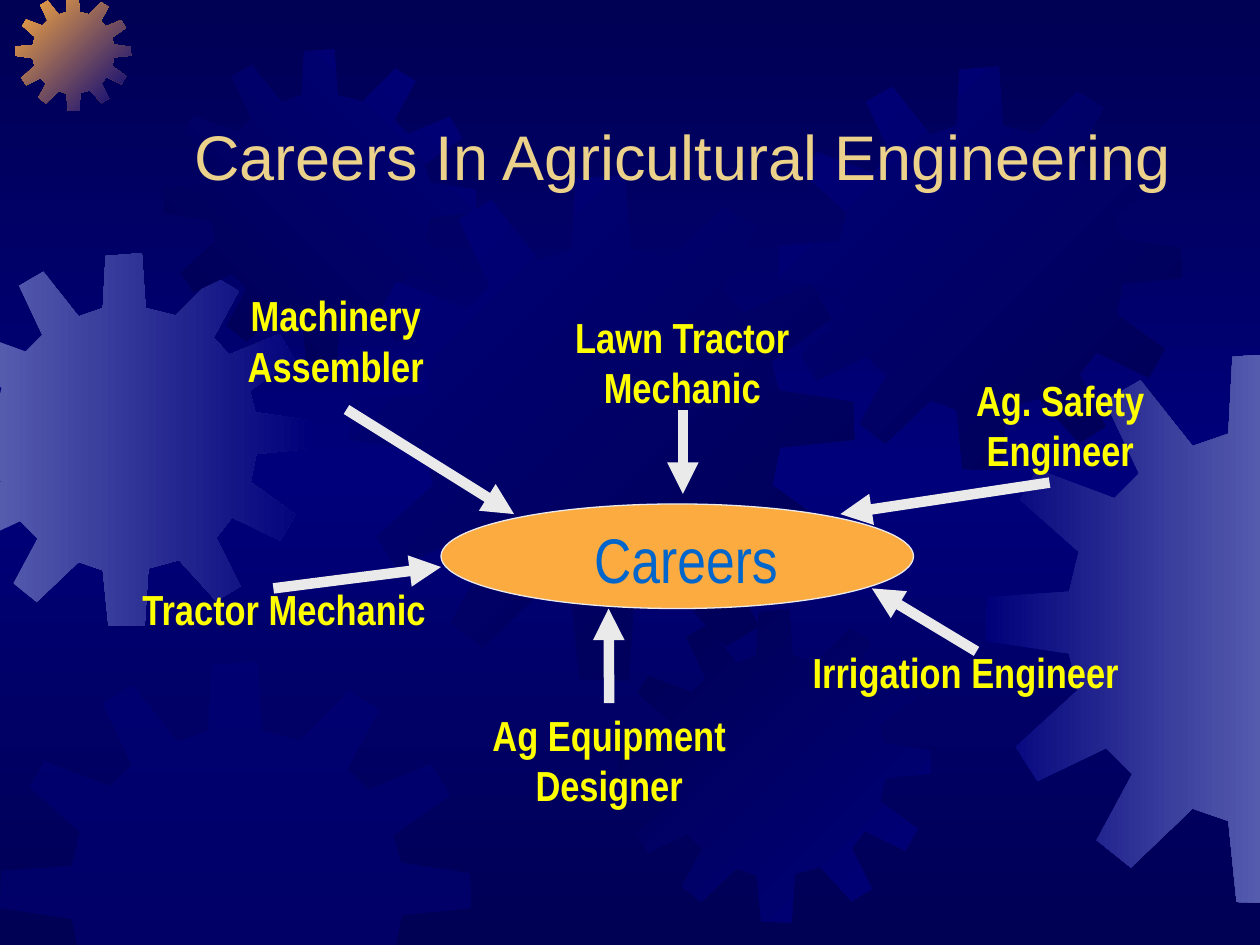
from copy import deepcopy

from lxml.etree import SubElement
from pptx import Presentation
from pptx.dml.color import RGBColor
from pptx.enum.shapes import MSO_CONNECTOR, MSO_SHAPE
from pptx.enum.text import MSO_ANCHOR, PP_ALIGN
from pptx.oxml.ns import qn
from pptx.util import Inches, Pt

NAVY = RGBColor(0x00, 0x00, 0x54)
BLUE = RGBColor(0x00, 0x00, 0x7A)
STEEL = RGBColor(0x55, 0x5B, 0xAD)
ORANGE = RGBColor(0xFC, 0xAB, 0x40)
SAND = RGBColor(0xEB, 0xD1, 0x89)
YELLOW = RGBColor(0xFF, 0xFF, 0x00)
AZURE = RGBColor(0x00, 0x66, 0xCC)
LIGHT = RGBColor(0xEA, 0xEA, 0xEA)

SLIDE_W, SLIDE_H = 10, 7.5

# Outline of a twelve-toothed gear, four points per tooth, on a 401-unit square
GEAR_UNITS = 401
GEAR = [
    (255, 67), (223, 59), (219, 0), (180, 3),
    (177, 59), (151, 68), (113, 20), (87, 35),
    (112, 88), (94, 106), (38, 85), (25, 107),
    (68, 145), (61, 174), (1, 178), (0, 210),
    (61, 219), (67, 246), (22, 287), (38, 312),
    (88, 288), (107, 307), (81, 355), (106, 375),
    (151, 332), (177, 341), (183, 400), (222, 401),
    (226, 339), (259, 330), (299, 374), (325, 358),
    (299, 306), (316, 284), (368, 309), (384, 281),
    (336, 246), (342, 216), (401, 210), (400, 180),
    (341, 171), (335, 148), (383, 114), (367, 87),
    (313, 109), (296, 91), (323, 41), (297, 25),
]

# left, top, size, first colour, last colour, clockwise angle
GEARS = [
    (-0.49, 2.01, 2.96, STEEL, BLUE, 0),
    (0.12, -0.04, 0.92, ORANGE, BLUE, 45),
    (1.3, 0.39, 2.48, NAVY, BLUE, 315),
    (2.77, 1.39, 4.01, BLUE, NAVY, 45),
    (0, 5.25, 3.74, BLUE, None, 0),
    (4.91, 4.84, 2.48, NAVY, BLUE, 45),
    (6.18, 0.53, 3.2, BLUE, NAVY, 45),
    (7.82, 2.8, 4.37, BLUE, STEEL, 0),
]

# label, its left and top, arrow start, arrow end, label side the arrow is joined to
CAREERS = [
    ("Ag. Safety Engineer", (6.16, 0.67), (7.41, 1.58), (5.75, 1.83), None),
    ("Tractor Mechanic", (0, 2.33), (1.25, 2.42), (2.58, 2.25), None),
    ("Machinery Assembler", (0.41, 0), (1.83, 1), (3.16, 1.83), None),
    ("Irrigation Engineer", (5.41, 2.83), (6.83, 2.92), (6, 2.42), None),
    ("Lawn Tractor Mechanic", (3.16, 0.17), (4.5, 1), (4.5, 1.67), None),
    ("Ag Equipment Designer", (2.58, 3.33), (3.91, 3.33), (3.91, 2.58), 0),
]
ONE_LINE = {"Tractor Mechanic", "Irrigation Engineer"}


def add_text(slide, text, box, size, font, color, bold=False, wrap=True,
             anchor=MSO_ANCHOR.TOP, side_margin=0.1):
    sp = slide.shapes.add_textbox(*map(Inches, box))
    tf = sp.text_frame
    tf.word_wrap = wrap
    tf.vertical_anchor = anchor
    tf.margin_left = tf.margin_right = Inches(side_margin)
    p = tf.paragraphs[0]
    p.alignment = PP_ALIGN.CENTER
    r = p.add_run()
    r.text = text
    r.font.size = Pt(size)
    r.font.name = font
    r.font.bold = bold
    r.font.color.rgb = color
    return sp


def set_gradient(fill, first, last, angle):
    fill.gradient()
    fill.gradient_angle = -angle % 360  # python-pptx counts counter-clockwise
    for stop, color, position in zip(fill.gradient_stops, (first, last), (0, 1)):
        stop.color.rgb = color
        stop.position = position


def clip(points, axis, limit, sign):
    """Keep the part of a polygon where sign * coordinate <= sign * limit."""
    kept = []
    for a, b in zip(points, points[1:] + points[:1]):
        a_in, b_in = (sign * pt[axis] <= sign * limit for pt in (a, b))
        if a_in:
            kept.append(a)
        if a_in != b_in:
            t = (limit - a[axis]) / (b[axis] - a[axis])
            kept.append(tuple(m + t * (n - m) for m, n in zip(a, b)))
    return kept


def add_gear(slide, left, top, size, first, last, angle):
    unit = size / GEAR_UNITS
    points = [(left + x * unit, top + y * unit) for x, y in GEAR]
    for axis, limit, sign in ((0, 0, -1), (0, SLIDE_W, 1), (1, 0, -1), (1, SLIDE_H, 1)):
        points = clip(points, axis, limit, sign)
    points = [(Inches(x), Inches(y)) for x, y in points]
    builder = slide.shapes.build_freeform(*points[0])
    builder.add_line_segments(points[1:], close=True)
    sp = builder.convert_to_shape()
    sp.shadow.inherit = False
    sp.line.fill.background()
    if last is None:  # plain, half transparent
        sp.fill.solid()
        sp.fill.fore_color.rgb = first
        color = sp.element.spPr.find(qn("a:solidFill"))[0]
        SubElement(color, qn("a:alpha"), val="50000")
    else:
        set_gradient(sp.fill, first, last, angle)


def add_background(slide):
    set_gradient(slide.background.fill, NAVY, NAVY, 90)
    stops = slide.element.find(".//" + qn("a:gsLst"))
    middle = deepcopy(stops[0])
    middle.set("pos", "50000")
    middle[0].set("val", str(BLUE))
    stops.insert(1, middle)
    for gear in GEARS:
        add_gear(slide, *gear)


def add_arrow(slide, start, end):
    line = slide.shapes.add_connector(MSO_CONNECTOR.STRAIGHT, *map(Inches, start + end))
    line.line.color.rgb = LIGHT
    line.line.width = Pt(6)
    spPr = line.element.spPr
    SubElement(spPr.find(qn("a:ln")), qn("a:tailEnd"), type="triangle")
    SubElement(spPr, qn("a:effectLst"))
    return line


def add_career_map(slide, left, top):
    def at(point):
        return left + point[0], top + point[1]

    # Hub; its word needs the full width of its box
    hub = slide.shapes.add_shape(
        MSO_SHAPE.OVAL, *map(Inches, at((2.58, 1.75)) + (3.75, 0.83)))
    hub.shadow.inherit = False
    hub.fill.solid()
    hub.fill.fore_color.rgb = ORANGE
    hub.line.color.rgb = LIGHT
    hub.line.width = Pt(0.75)
    add_text(slide, "Careers", at((3.7, 1.83)) + (1.65, 0.62), 36, "Arial Narrow",
             AZURE, wrap=False, side_margin=0)

    # Labels and arrows to the hub
    for name, corner, start, end, side in CAREERS:
        height = 0.5 if name in ONE_LINE else 0.9
        label = add_text(slide, name, at(corner) + (2.67, height), 24,
                         "Arial Narrow", YELLOW, bold=True)
        arrow = add_arrow(slide, at(start), at(end))
        if side is not None:
            arrow.begin_connect(label, side)


def add_title(slide, box):
    add_text(slide, "Careers In Agricultural Engineering", box, 36, "Arial", SAND,
             anchor=MSO_ANCHOR.BOTTOM)


def main():
    prs = Presentation()
    prs.slide_width, prs.slide_height = Inches(SLIDE_W), Inches(SLIDE_H)
    slide = prs.slides.add_slide(prs.slide_layouts[6])
    add_background(slide)
    add_title(slide, (1.17, 0.33, 8.5, 1.25))
    add_career_map(slide, 0.92, 2.25)
    prs.save("out.pptx")


if __name__ == "__main__":
    main()
